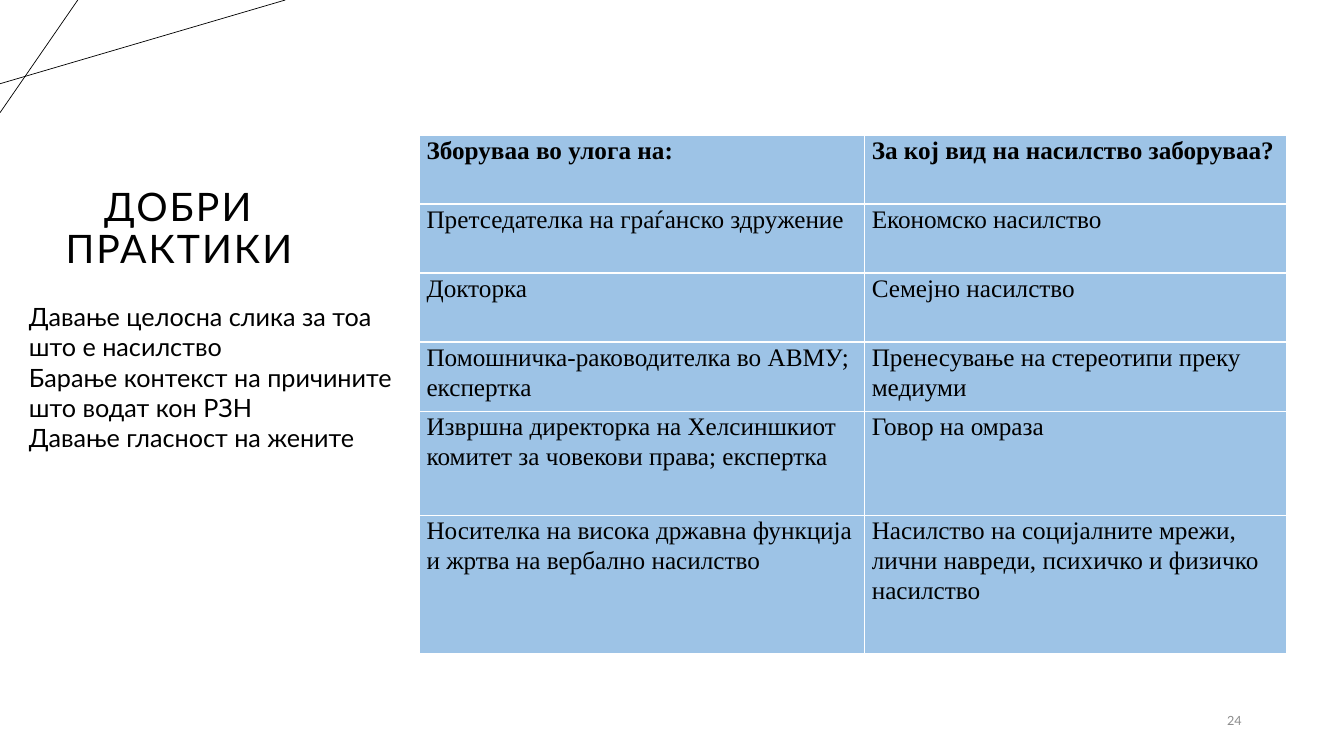
from lxml import etree
from pptx import Presentation
from pptx.dml.color import RGBColor
from pptx.enum import shapes, text
from pptx.oxml import parse_xml
from pptx.oxml.ns import nsdecls, qn
from pptx.util import Cm, Pt

BLACK, WHITE, GREY, SKY = "000000", "FFFFFF", "8C8C8C", "9DC3E6"
SANS, SERIF = "Lato", "Times New Roman"

CORNER_LINES = [(0, 2.11, 7.19, 0), (1.96, 0, 0, 2.84)]
PRACTICES = [
    "Давање целосна слика за тоа што е насилство",
    "Барање контекст на причините што водат кон РЗН",
    "Давање гласност на жените",
]
COLUMN_WIDTHS = [11.22, 10.64]
ROW_HEIGHTS = [1.74] * 4 + [2.62, 3.5]
SPEAKERS = [
    ("Зборуваа во улога на:", "За кој вид на насилство заборуваа?"),
    ("Претседателка на граѓанско здружение", "Економско насилство"),
    ("Докторка", "Семејно насилство"),
    ("Помошничка-раководителка во АВМУ; експертка",
     "Пренесување на стереотипи преку медиуми"),
    ("Извршна директорка на Хелсиншкиот комитет за човекови права; експертка",
     "Говор на омраза"),
    ("Носителка на висока државна функција и жртва на вербално насилство",
     "Насилство на социјалните мрежи, лични навреди, психичко и физичко насилство"),
]


def rgb(color):
    return RGBColor.from_string(color)


def write(frame, *paragraphs, size=18, font=SANS, color=BLACK, bold=False,
          align=text.PP_ALIGN.LEFT, anchor=text.MSO_ANCHOR.TOP,
          line_spacing=1.0, tracking=None):
    """Fill a text frame with one run per paragraph; tracking is in points."""
    frame.word_wrap = True
    frame.vertical_anchor = anchor
    for index, words in enumerate(paragraphs):
        paragraph = frame.add_paragraph() if index else frame.paragraphs[0]
        paragraph.alignment = align
        paragraph.line_spacing = line_spacing
        run = paragraph.add_run()
        run.text = words
        run.font.size = Pt(size)
        run.font.name = font
        run.font.bold = bold
        run.font.color.rgb = rgb(color)
        if tracking:
            run.font._element.set("spc", str(int(tracking * 100)))


def add_text(slide, left, top, width, height, *paragraphs, **style):
    box = slide.shapes.add_textbox(Cm(left), Cm(top), Cm(width), Cm(height))
    write(box.text_frame, *paragraphs, **style)


def add_line(slide, x1, y1, x2, y2):
    line = slide.shapes.add_connector(
        shapes.MSO_CONNECTOR.STRAIGHT, Cm(x1), Cm(y1), Cm(x2), Cm(y2))
    line.line.color.rgb = rgb(BLACK)
    line.line.width = Pt(0.5)
    etree.SubElement(line._element.spPr, qn("a:effectLst"))


def set_title(slide, words):
    title = slide.shapes.title
    title.left, title.top = Cm(0), Cm(5.05)
    title.width, title.height = Cm(9.02), Cm(1.93)
    title.text_frame.auto_size = text.MSO_AUTO_SIZE.NONE
    write(title.text_frame, words, size=28, align=text.PP_ALIGN.CENTER,
          anchor=text.MSO_ANCHOR.BOTTOM, line_spacing=0.9, tracking=1.5)


def add_borders(cell, color):
    properties = cell._tc.get_or_add_tcPr()
    for index, side in enumerate("LRTB"):
        properties.insert(index, parse_xml(
            f'<a:ln{side} {nsdecls("a")} w="{Pt(1)}"><a:solidFill>'
            f'<a:srgbClr val="{color}"/></a:solidFill></a:ln{side}>'))


def add_speakers_table(slide, left, top):
    table = slide.shapes.add_table(
        len(SPEAKERS), len(COLUMN_WIDTHS), Cm(left), Cm(top),
        Cm(sum(COLUMN_WIDTHS)), Cm(sum(ROW_HEIGHTS))).table
    for column, width in zip(table.columns, COLUMN_WIDTHS):
        column.width = Cm(width)
    for index, (row, height) in enumerate(zip(table.rows, ROW_HEIGHTS)):
        row.height = Cm(height)
        for cell, words in zip(row.cells, SPEAKERS[index]):
            cell.margin_left = cell.margin_right = Cm(0.18)
            cell.margin_top = cell.margin_bottom = 0
            cell.fill.solid()
            cell.fill.fore_color.rgb = rgb(SKY)
            add_borders(cell, WHITE)
            write(cell.text_frame, words, font=SERIF, bold=index == 0,
                  line_spacing=1.07)


def main():
    deck = Presentation()
    deck.slide_width, deck.slide_height = Cm(33.87), Cm(19.05)
    slide = deck.slides.add_slide(deck.slide_layouts.get_by_name("Title Only"))
    for ends in CORNER_LINES:
        add_line(slide, *ends)
    set_title(slide, "ДОБРИ ПРАКТИКИ")
    add_text(slide, 28.8, 17.65, 2.74, 1.02, "24", size=9, color=GREY,
             align=text.PP_ALIGN.RIGHT, anchor=text.MSO_ANCHOR.MIDDLE)
    add_speakers_table(slide, 10.57, 3.4)
    add_text(slide, 0.48, 7.47, 9.7, 4.11, *PRACTICES)
    deck.save("out.pptx")


if __name__ == "__main__":
    main()
